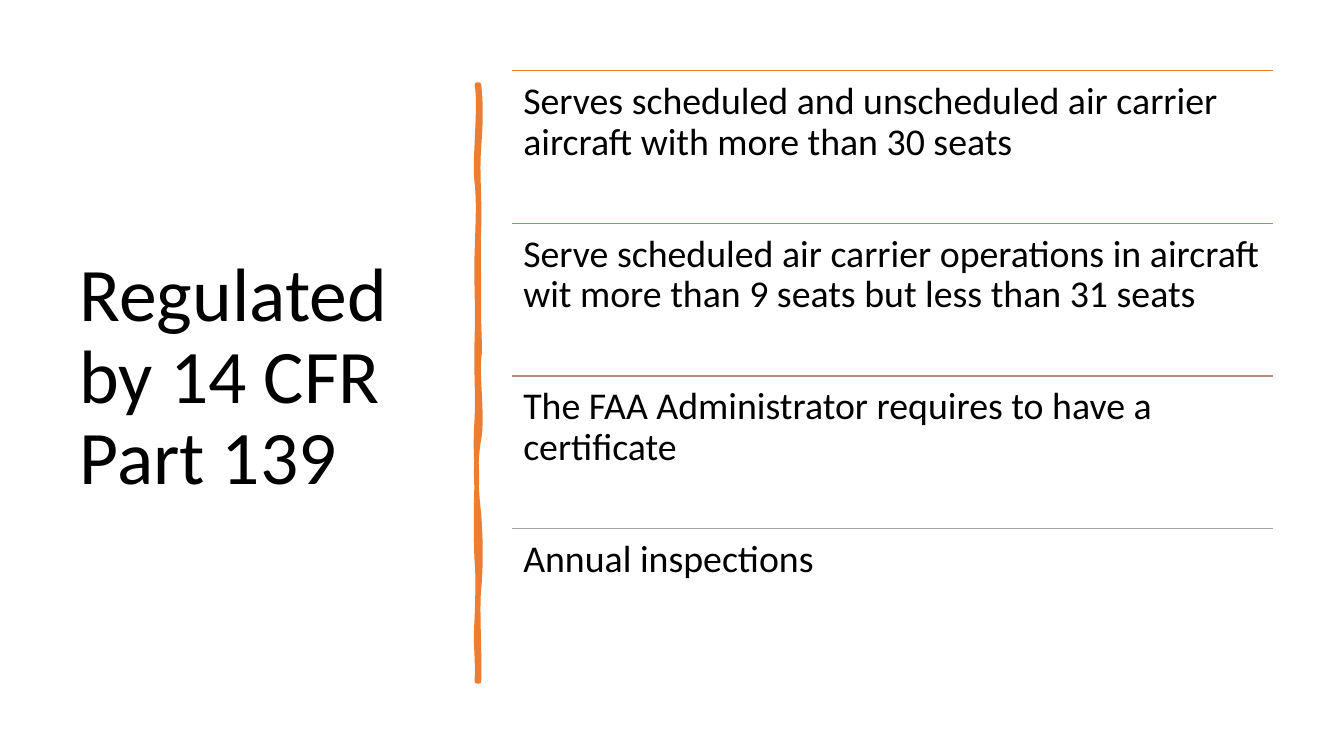
from copy import deepcopy

from lxml import etree
from pptx import Presentation
from pptx.dml.color import RGBColor
from pptx.enum import shapes, text
from pptx.oxml import ns
from pptx.util import Inches, Pt

COLORS = {"text": "000000", "brush": "ED7D31"}
FONT = "Calibri"

REQUIREMENTS = [
    ("Serves scheduled and unscheduled air carrier aircraft with more than 30 seats", "ED7D31"),
    ("Serve scheduled air carrier operations in aircraft wit more than 9 seats but less than 31 seats", "D17B5C"),
    ("The FAA Administrator requires to have a certificate", "B98A82"),
    ("Annual inspections", "A5A5A5"),
]
LIST_LEFT, LIST_TOP, LIST_WIDTH, LIST_HEIGHT = 5.08, 0.7, 7.55, 6.06
ROW_HEIGHT = LIST_HEIGHT / len(REQUIREMENTS)

# Brush stroke: start point, then cubic curves as two controls and an end point
BRUSH_CENTER = (4.74, 3.8)
BRUSH_START = (4.75, 0.84)
BRUSH_OUTLINE = [
    (4.77, 1.02, 4.77, 1.19, 4.75, 1.46), (4.73, 1.73, 4.76, 1.95, 4.75, 2.26),
    (4.74, 2.57, 4.75, 2.62, 4.75, 2.94), (4.74, 3.25, 4.77, 3.42, 4.75, 3.56),
    (4.73, 3.7, 4.79, 4.14, 4.75, 4.36), (4.71, 4.57, 4.72, 4.84, 4.75, 5.1),
    (4.77, 5.36, 4.77, 5.64, 4.75, 5.84), (4.73, 6.03, 4.76, 6.5, 4.75, 6.76),
    (4.74, 6.76, 4.73, 6.76, 4.73, 6.76), (4.74, 6.46, 4.71, 6.44, 4.73, 6.13),
    (4.74, 5.83, 4.74, 5.7, 4.73, 5.57), (4.72, 5.44, 4.72, 4.95, 4.73, 4.77),
    (4.73, 4.59, 4.71, 4.45, 4.73, 4.15), (4.74, 3.86, 4.72, 3.73, 4.73, 3.35),
    (4.74, 2.98, 4.72, 2.81, 4.73, 2.5), (4.74, 2.18, 4.75, 2, 4.73, 1.81),
    (4.7, 1.63, 4.77, 1.04, 4.73, 0.84), (4.74, 0.84, 4.74, 0.84, 4.75, 0.84),
]
BRUSH_FILL = [
    (4.75, 1.15, 4.72, 1.25, 4.75, 1.52), (4.77, 1.79, 4.74, 1.97, 4.75, 2.08),
    (4.76, 2.2, 4.74, 2.55, 4.75, 2.94), (4.76, 3.33, 4.73, 3.43, 4.75, 3.62),
    (4.77, 3.81, 4.77, 3.97, 4.75, 4.3), (4.72, 4.63, 4.75, 4.74, 4.75, 5.16),
    (4.75, 5.57, 4.74, 5.53, 4.75, 5.78), (4.76, 6.03, 4.74, 6.47, 4.75, 6.76),
    (4.74, 6.75, 4.73, 6.75, 4.73, 6.76), (4.7, 6.49, 4.74, 6.32, 4.73, 6.13),
    (4.72, 5.95, 4.75, 5.69, 4.73, 5.39), (4.71, 5.1, 4.76, 5, 4.73, 4.71),
    (4.7, 4.42, 4.77, 4.2, 4.73, 3.86), (4.69, 3.51, 4.74, 3.25, 4.73, 3),
    (4.71, 2.75, 4.71, 2.59, 4.73, 2.38), (4.74, 2.16, 4.74, 1.85, 4.73, 1.64),
    (4.71, 1.43, 4.75, 1.21, 4.73, 0.84), (4.74, 0.84, 4.74, 0.84, 4.75, 0.84),
]


def set_attributes(target, values):
    for name, value in values.items():
        setattr(target, name, value)


def place(shape, left, top, width, height):
    set_attributes(shape, {"left": Inches(left), "top": Inches(top),
                           "width": Inches(width), "height": Inches(height)})


def write_text(shape, wording, size, frame_format):
    frame = shape.text_frame
    frame.text = wording
    set_attributes(frame, {"word_wrap": True, "auto_size": text.MSO_AUTO_SIZE.NONE,
                           **frame_format})
    paragraph = frame.paragraphs[0]
    set_attributes(paragraph, {"alignment": text.PP_ALIGN.LEFT, "line_spacing": 0.9})
    font = paragraph.runs[0].font
    set_attributes(font, {"name": FONT, "size": Pt(size)})
    font.color.rgb = RGBColor.from_string(COLORS["text"])


def lay_flat(x, y):
    """Turn a point of the upright brush back by 90 degrees, in EMU."""
    center_x, center_y = BRUSH_CENTER
    return Inches(center_x + y - center_y), Inches(center_y - x + center_x)


def bend(contour, curves, shape):
    """Replace the straight segments of a contour by cubic curves."""
    for segment, curve in zip(contour.findall(ns.qn("a:lnTo")), curves):
        cubic = etree.Element(ns.qn("a:cubicBezTo"))
        for x, y in zip(curve[::2], curve[1::2]):
            along, across = lay_flat(x, y)
            etree.SubElement(cubic, ns.qn("a:pt"),
                             x=str(along - shape.left), y=str(across - shape.top))
        contour.replace(segment, cubic)


def add_brush(slide):
    builder = slide.shapes.build_freeform(*lay_flat(*BRUSH_START))
    builder.add_line_segments([lay_flat(*curve[4:]) for curve in BRUSH_OUTLINE], close=True)
    shape = builder.convert_to_shape()
    shape.shadow.inherit = False
    color = RGBColor.from_string(COLORS["brush"])
    shape.fill.solid()
    shape.fill.fore_color.rgb = color
    shape.line.color.rgb = color
    shape.line.width = Pt(3.25)

    # One contour carries the line, the other the fill
    outline = next(shape._element.iter(ns.qn("a:path")))
    filling = deepcopy(outline)
    outline.addnext(filling)
    outline.set("fill", "none")
    filling.set("stroke", "0")
    bend(outline, BRUSH_OUTLINE, shape)
    bend(filling, BRUSH_FILL, shape)
    shape.rotation = 90


def add_rule(slide, top, color):
    rule = slide.shapes.add_connector(
        shapes.MSO_CONNECTOR.STRAIGHT, Inches(LIST_LEFT), Inches(top),
        Inches(LIST_LEFT + LIST_WIDTH), Inches(top))
    rule.line.color.rgb = RGBColor.from_string(color)
    rule.line.width = Pt(1)
    etree.SubElement(rule._element.spPr, ns.qn("a:effectLst"))


def add_requirement(slide, top, wording):
    box = slide.shapes.add_textbox(Inches(LIST_LEFT), Inches(top),
                                   Inches(LIST_WIDTH), Inches(ROW_HEIGHT))
    margins = {f"margin_{side}": Inches(0.11) for side in ("left", "top", "right", "bottom")}
    write_text(box, wording, 27, {"vertical_anchor": text.MSO_ANCHOR.TOP, **margins})


def main():
    presentation = Presentation()
    set_attributes(presentation, {"slide_width": Inches(13.33), "slide_height": Inches(7.5)})
    slide = presentation.slides.add_slide(presentation.slide_layouts.get_by_name("Title Only"))

    # Title
    title = slide.shapes.title
    place(title, 0.69, 0.7, 3.74, 6.11)
    write_text(title, "Regulated by 14 CFR Part 139", 54,
               {"vertical_anchor": text.MSO_ANCHOR.MIDDLE})

    # Vertical brush stroke
    add_brush(slide)

    # Requirements, each under its own rule
    for row, (wording, color) in enumerate(REQUIREMENTS):
        top = LIST_TOP + row * ROW_HEIGHT
        add_rule(slide, top, color)
        add_requirement(slide, top, wording)

    presentation.save("out.pptx")


if __name__ == "__main__":
    main()
